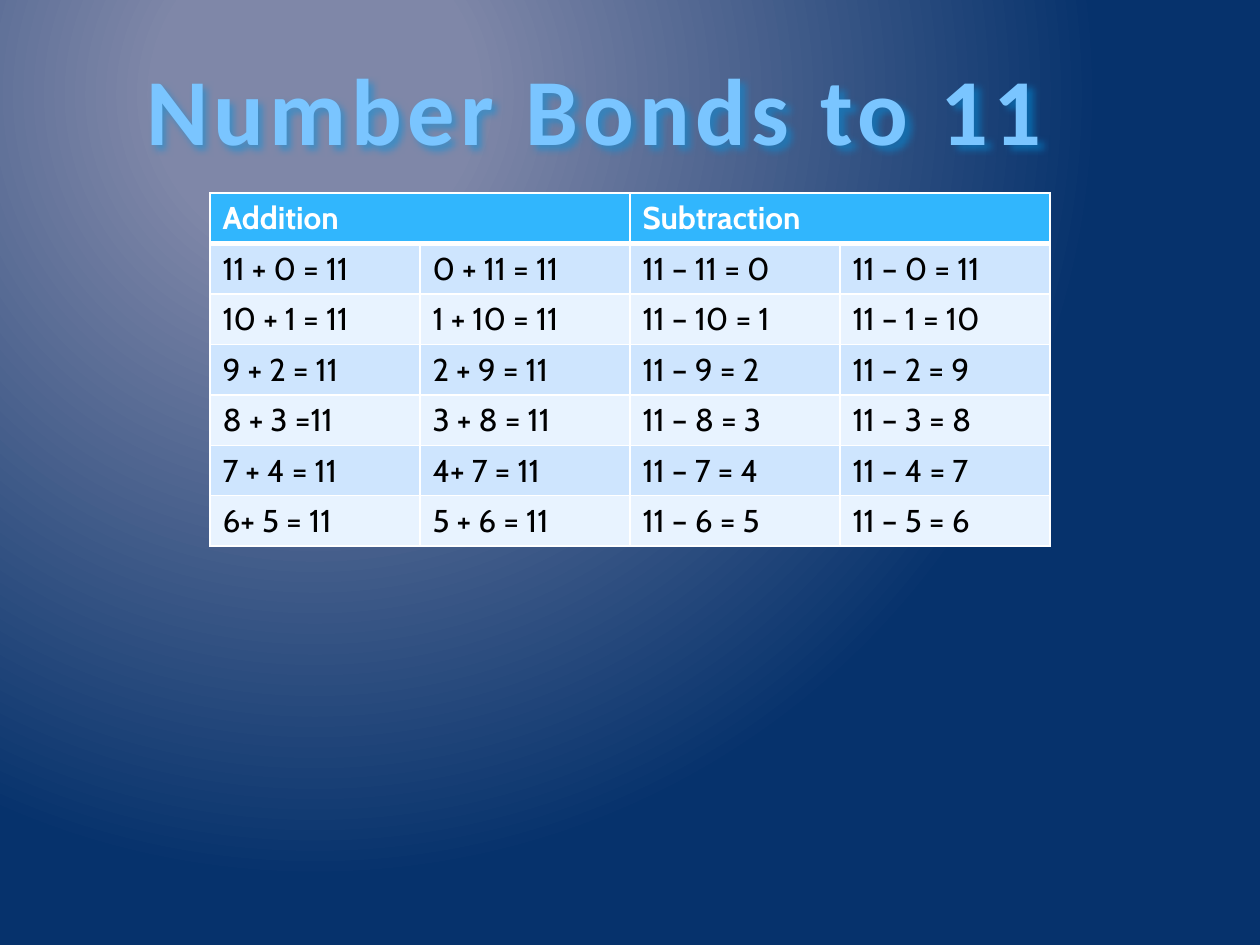
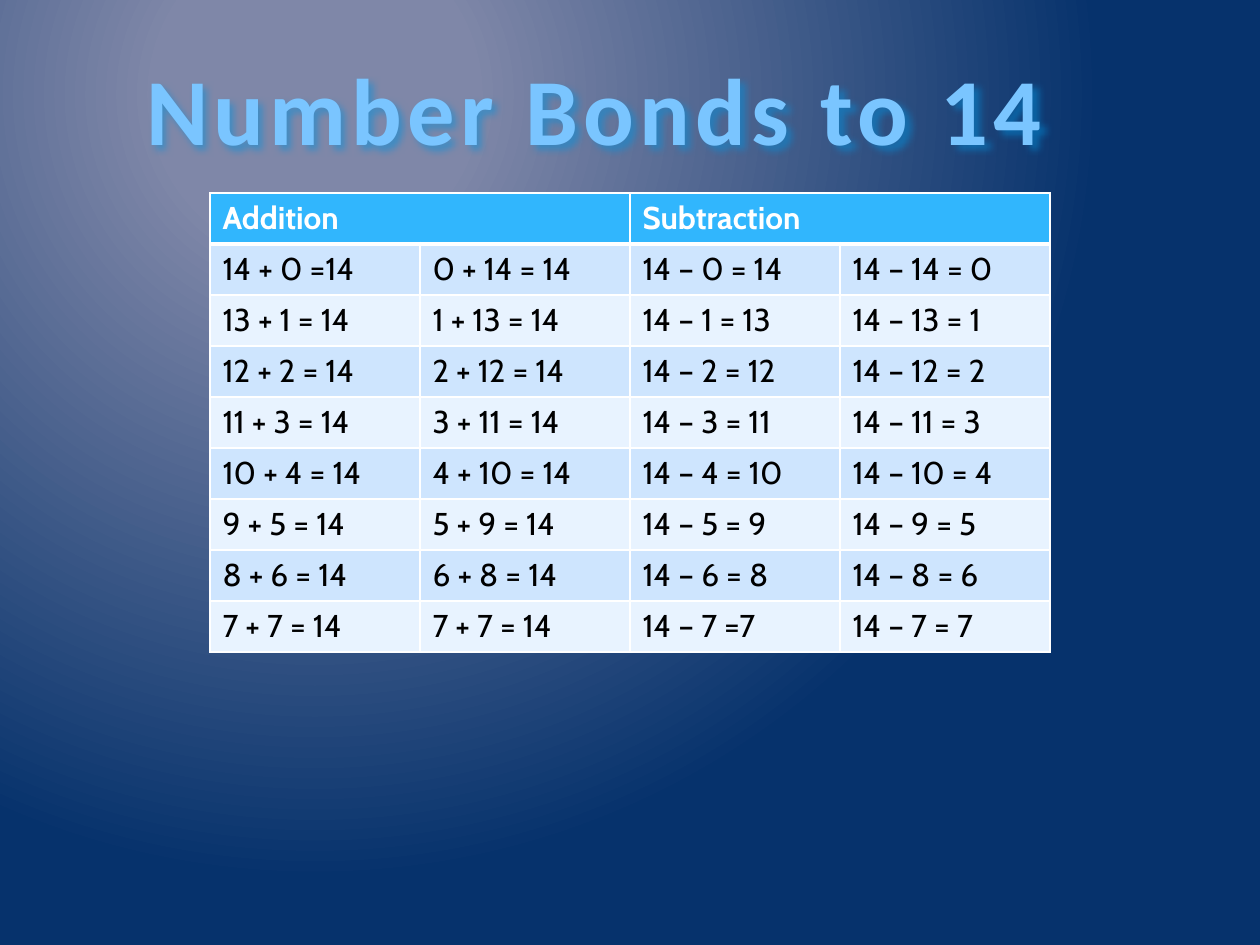
from pptx import Presentation
from pptx.dml.color import RGBColor
from pptx.enum.text import MSO_AUTO_SIZE, MSO_ANCHOR, PP_ALIGN
from pptx.oxml import parse_xml
from pptx.oxml.ns import nsdecls, qn
from pptx.util import Pt

GROW = MSO_AUTO_SIZE.SHAPE_TO_FIT_TEXT
TOP = MSO_ANCHOR.TOP
LEFT, MID = PP_ALIGN.LEFT, PP_ALIGN.CENTER

# Shared style
NIGHT, HAZE = "06326C", "7F87A8"
SKY, BLUE, EDGE = "7AC5FF", "0092DF", "073E87"
HEAD, BANDS = "31B6FD", ("CEE5FE", "E8F3FF")
WHITE, BLACK = "FFFFFF", "000000"
HEADS = ("Addition", "Subtraction")


def px(n):
    return round(n * 914400 / 126)


def rgb(code):
    return RGBColor.from_string(code)


def xml(tag, body, attrs=""):
    return parse_xml(f"<a:{tag} {nsdecls('a')} {attrs}>{body}</a:{tag}>")


def solid(code, inner=""):
    return f'<a:solidFill><a:srgbClr val="{code}">{inner}</a:srgbClr></a:solidFill>'


def grad(stops, shade):
    marks = "".join(f'<a:gs pos="{at * 1000}"><a:srgbClr val="{code}"/></a:gs>'
                    for at, code in stops)
    return xml("gradFill", f"<a:gsLst>{marks}</a:gsLst>{shade}", 'rotWithShape="1"')


def write(frame, text, font="Cabin", size=18, color=None, bold=False, align=LEFT):
    par = frame.paragraphs[0]
    par.alignment = align
    run = par.add_run()
    run.text = text
    run.font.name, run.font.size, run.font.bold = font, Pt(size), bold
    if color:
        run.font.color.rgb = rgb(color)
    return run


class Deck:
    def __init__(self):
        self.prs = Presentation()
        self.prs.slide_width, self.prs.slide_height = px(1260), px(945)
        self.slide = None
        self.back()

    def back(self):
        master = self.prs.slide_master
        master.background.fill.gradient()
        old = master.element.find(".//" + qn("a:gradFill"))
        glow = ('<a:path path="circle"><a:fillToRect l="50000" t="20000" '
                'r="100000" b="100000"/></a:path>')
        old.getparent().replace(old, grad([(20, HAZE), (100, NIGHT)], glow))

    def page(self):
        self.slide = self.prs.slides.add_slide(self.prs.slide_layouts[6])

    def title(self, text):
        box = self.slide.shapes.add_textbox(px(44), px(45), px(1101), px(127))
        frame = box.text_frame
        frame.word_wrap, frame.auto_size = True, GROW
        frame.vertical_anchor = TOP
        run = write(frame, text, font="Calibri", size=54, bold=True, align=MID)
        props = run.font._element
        props.set("spc", "300")
        props.insert(0, xml("ln", solid(EDGE), f'w="{Pt(0.9)}"'))
        props.insert(1, grad([(10, SKY), (75, BLUE)], '<a:lin ang="5400000" scaled="0"/>'))
        # Soft shadow behind the letters
        box.element.spPr.append(xml("effectLst", (
            f'<a:outerShdw blurRad="{Pt(4)}" dist="{Pt(3)}" dir="2700000" algn="tl">'
            f'<a:srgbClr val="{BLUE}"><a:alpha val="50000"/></a:srgbClr></a:outerShdw>')))

    def cell(self, cell, text, fill, color, bold=False, top=1, base=1):
        cell.fill.solid()
        cell.fill.fore_color.rgb = rgb(fill)
        if text:
            write(cell.text_frame, text, color=color, bold=bold)
        props = cell._tc.get_or_add_tcPr()
        for i, (side, width) in enumerate(zip("LRTB", (1, 1, top, base))):
            props.insert(i, xml("ln" + side, solid(WHITE), f'w="{Pt(width)}"'))

    def table(self, rows, high):
        count = len(rows) + 1
        grid = self.slide.shapes.add_table(
            count, 4, px(210), px(193), px(840), px(high * count)).table
        for row in grid.rows:
            row.height = px(high)
        for col in range(4):
            name = HEADS[col // 2] if col % 2 == 0 else ""
            self.cell(grid.cell(0, col), name, HEAD, WHITE, bold=True, base=3)
        for col in (0, 2):
            grid.cell(0, col).merge(grid.cell(0, col + 1))
        for r, row in enumerate(rows):
            for col, text in enumerate(row):
                self.cell(grid.cell(r + 1, col), text, BANDS[r % 2], BLACK,
                          top=1 if r else 3)


def bonds(total, flip, odd):
    """Sums and differences; odd holds the entries with their own spacing."""
    rows = []
    for n in range(total // 2 + 1):
        m = total - n
        less = [f"{total} – {n} = {m}", f"{total} – {m} = {n}"]
        row = [f"{m} + {n} = {total}", f"{n} + {m} = {total}"]
        row += less[::-1] if flip else less
        rows.append([odd.get((n, col), text) for col, text in enumerate(row)])
    return rows


def main():
    # Total, order of differences, row height, odd entries by (row, column)
    pages = [
        (11, True, 50, {(3, 0): "8 + 3 =11", (4, 1): "4+ 7 = 11", (5, 0): "6+ 5 = 11"}),
        (14, False, 51, {(0, 0): "14 + 0 =14", (7, 2): "14 – 7 =7"}),
    ]
    deck = Deck()
    for total, flip, high, odd in pages:
        deck.page()
        deck.title(f"Number Bonds to {total}")
        deck.table(bonds(total, flip, odd), high)
    deck.prs.save("out.pptx")


if __name__ == "__main__":
    main()
